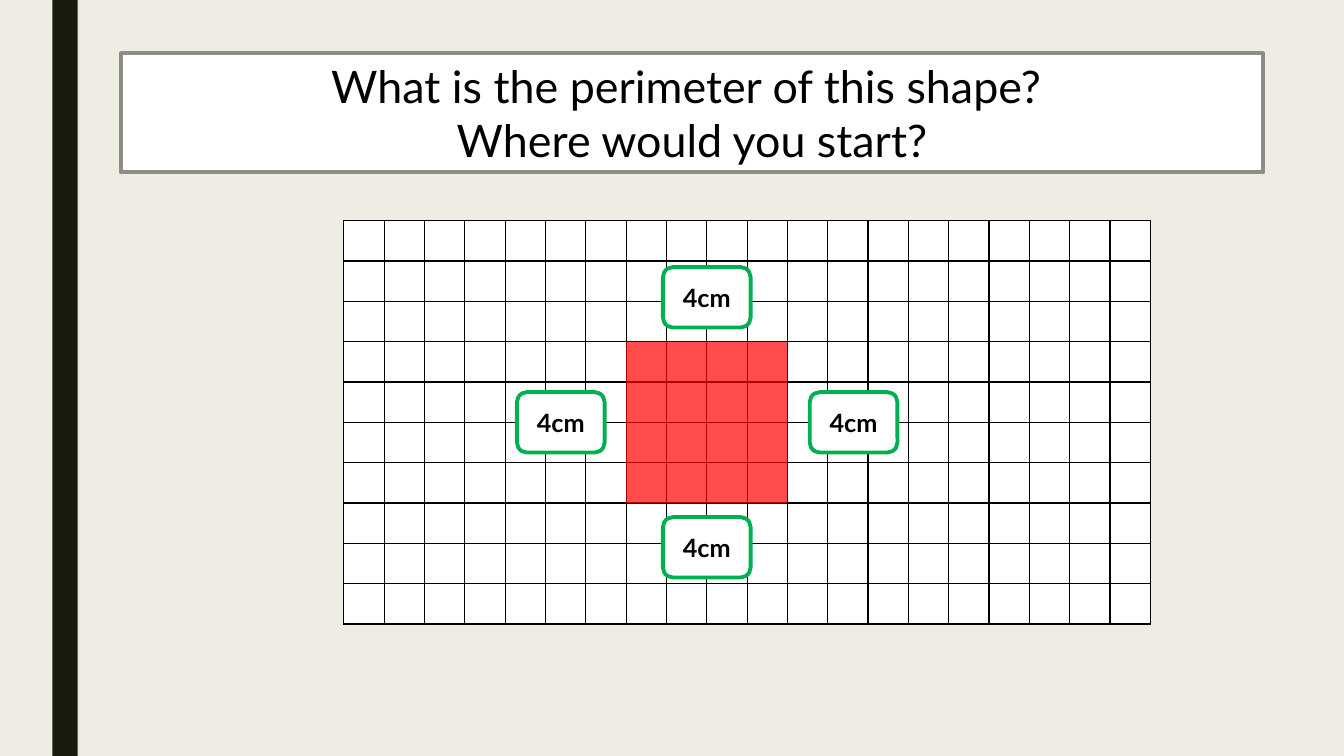
from lxml import etree
from pptx import Presentation
from pptx.dml.color import RGBColor
from pptx.enum.shapes import MSO_SHAPE as Preset
from pptx.enum.text import MSO_ANCHOR as Anchor, PP_ALIGN as Align
from pptx.oxml.ns import qn
from pptx.util import Inches, Pt

CREAM = RGBColor(0xEF, 0xED, 0xE3)
DARK = RGBColor(0x19, 0x1B, 0x0E)
WHITE = RGBColor(0xFF, 0xFF, 0xFF)
BLACK = RGBColor(0x00, 0x00, 0x00)
RED = RGBColor(0xFF, 0x00, 0x00)
GREEN = RGBColor(0x00, 0xB0, 0x50)
GREY = RGBColor(0x8C, 0x8D, 0x86)

FONT = "Lato"
SLIDE_WIDTH, SLIDE_HEIGHT = 13.33, 7.5
UNIT = 0.4
COLUMNS, ROWS = 20, 10
GRID_LEFT, GRID_TOP = 3.41, 2.19
LABEL_WIDTH, LABEL_HEIGHT = 0.87, 0.6
LABEL_CENTRES = [(9, 1.9), (5.38, 5), (12.64, 5), (9, 8.1)]


def grid_point(column, row):
    return GRID_LEFT + column * UNIT, GRID_TOP + row * UNIT


def add_box(page, preset, left, top, width, height, fill, outline=None):
    box = page.shapes.add_shape(
        preset, Inches(left), Inches(top), Inches(width), Inches(height))
    box.shadow.inherit = False
    box.fill.solid()
    box.fill.fore_color.rgb = fill
    if outline is None:
        box.line.fill.background()
    else:
        box.line.color.rgb = outline
        box.line.width = Pt(2.75)
    return box


def write_lines(box, lines, size, bold=False):
    frame = box.text_frame
    frame.word_wrap = True
    frame.vertical_anchor = Anchor.MIDDLE
    for index, line in enumerate(lines):
        para = frame.add_paragraph() if index else frame.paragraphs[0]
        para.text = line
        para.alignment = Align.CENTER
        para.font.name = FONT
        para.font.size = Pt(size)
        para.font.bold = bold
        para.font.color.rgb = BLACK


def style_cell(cell):
    cell.margin_left = cell.margin_right = 0
    cell.margin_top = cell.margin_bottom = 0
    properties = cell._tc.get_or_add_tcPr()
    for side in ("a:lnL", "a:lnR", "a:lnT", "a:lnB"):
        border = etree.SubElement(properties, qn(side), w=str(Pt(1)))
        solid = etree.SubElement(border, qn("a:solidFill"))
        etree.SubElement(solid, qn("a:srgbClr"), val=str(BLACK))
    cell.fill.solid()
    cell.fill.fore_color.rgb = WHITE


def add_squared_grid(page):
    table = page.shapes.add_table(
        ROWS, COLUMNS, Inches(GRID_LEFT), Inches(GRID_TOP),
        Inches(COLUMNS * UNIT), Inches(ROWS * UNIT)).table
    table.first_row = False
    table.horz_banding = False
    for cell in table.iter_cells():
        style_cell(cell)


def add_red_square(page, column, row, units):
    left, top = grid_point(column, row)
    square = add_box(page, Preset.RECTANGLE, left, top,
                     units * UNIT, units * UNIT, RED)
    colour = square.fill._xPr.find(qn("a:solidFill"))[0]
    etree.SubElement(colour, qn("a:alpha"), val="70000")


def add_length_label(page, text, column, row):
    x, y = grid_point(column, row)
    label = add_box(page, Preset.ROUNDED_RECTANGLE,
                    x - LABEL_WIDTH / 2, y - LABEL_HEIGHT / 2,
                    LABEL_WIDTH, LABEL_HEIGHT, WHITE, GREEN)
    frame = label.text_frame
    frame.margin_left = frame.margin_right = Inches(0.12)
    frame.margin_top = frame.margin_bottom = Inches(0.12)
    write_lines(label, [text], 18, bold=True)


def main():
    deck = Presentation()
    deck.slide_width = Inches(SLIDE_WIDTH)
    deck.slide_height = Inches(SLIDE_HEIGHT)
    page = deck.slides.add_slide(deck.slide_layouts[6])
    page.background.fill.solid()
    page.background.fill.fore_color.rgb = CREAM

    add_box(page, Preset.RECTANGLE, 0.52, 0, 0.25, SLIDE_HEIGHT, DARK)
    add_squared_grid(page)
    add_red_square(page, 7, 3, 4)
    for column, row in LABEL_CENTRES:
        add_length_label(page, "4cm", column, row)

    title = add_box(page, Preset.RECTANGLE, 1.2, 0.53, 11.33, 1.18, WHITE, GREY)
    write_lines(title, ["What is the perimeter of this shape? ",
                        "Where would you start?"], 32)
    deck.save("out.pptx")


if __name__ == "__main__":
    main()
